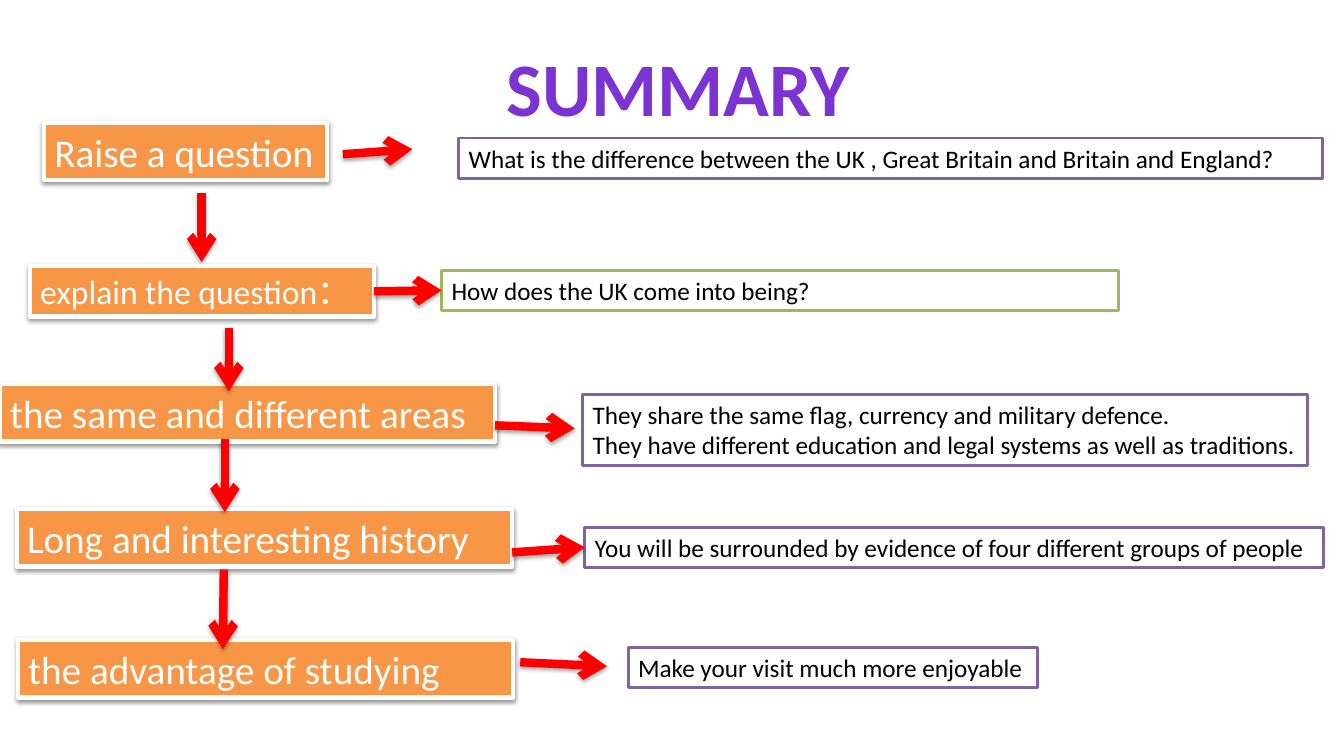
"""Build the SUMMARY slide: a chain of lesson steps, each pointing to its explanation."""
from lxml import etree
from pptx import Presentation
from pptx import util as u
from pptx.dml.color import RGBColor
from pptx.enum import shapes, text
from pptx.oxml import ns

COLORS = {
    "title": "7B34D2", "step": "F79646", "white": "FFFFFF", "black": "000000",
    "purple": "8064A2", "green": "9BBB59", "arrow": "FF0000",
}
COLORS = {name: RGBColor.from_string(value) for name, value in COLORS.items()}


def add_shadow(item, distance, opacity):
    """Give a shape or connector a soft shadow falling straight down."""
    effects = etree.SubElement(item._element.spPr, ns.qn("a:effectLst"))
    shadow = etree.SubElement(
        effects, ns.qn("a:outerShdw"), blurRad=str(u.Pt(3.1)), dist=str(u.Pt(distance)),
        dir="5400000", rotWithShape="0")
    color = etree.SubElement(shadow, ns.qn("a:srgbClr"), val="000000")
    etree.SubElement(color, ns.qn("a:alpha"), val=str(opacity * 1000))


def add_box(place, lines, size, color, wrap=True):
    """Add a text box with one paragraph per line."""
    box = slide.shapes.add_textbox(*map(u.Inches, place))
    frame = box.text_frame
    frame.word_wrap = wrap
    frame.auto_size = text.MSO_AUTO_SIZE.SHAPE_TO_FIT_TEXT
    frame.text = lines
    for para in frame.paragraphs:
        for span in para.runs:
            span.font.name = "Calibri"
            span.font.size = u.Pt(size)
            span.font.color.rgb = COLORS[color]
    return box


deck = Presentation()
deck.slide_width, deck.slide_height = u.Inches(13.33), u.Inches(7.5)
slide = deck.slides.add_slide(deck.slide_layouts[6])

title = add_box((4.9, 0.36, 3.82, 1.01), "SUMMARY ", 54, "title", wrap=False)
title_para = title.text_frame.paragraphs[0]
title_para.alignment = text.PP_ALIGN.CENTER
title_para.runs[0].font.bold = True

steps = [
    ("Raise a question", 28, (0.44, 1.22, 2.8, 0.57)),
    ("explain the question：", 24, (0.3, 2.64, 3.41, 0.5)),
    ("the same and different areas", 28, (0, 3.81, 4.91, 0.57)),
    ("Long and interesting history", 28, (0.17, 5.05, 4.91, 0.57)),
    ("the advantage of studying", 28, (0.18, 6.35, 4.91, 0.57)),
]
step_boxes = []
for label, size, place in steps:
    box = add_box(place, label, size, "white")
    box.fill.solid()
    box.fill.fore_color.rgb = COLORS["step"]
    box.line.color.rgb = COLORS["white"]
    box.line.width = u.Pt(3)
    add_shadow(box, 1.6, 38)
    step_boxes.append(box)
step_boxes[0].text_frame.word_wrap = False

answers = [
    ("What is the difference between the UK , Great Britain and Britain and England?",
     "purple", True, (4.55, 1.37, 8.57, 0.4)),
    ("How does the UK come into being?", "green", True, (4.38, 2.68, 6.71, 0.4)),
    ("They share the same flag, currency and military defence.\n"
     "They have different education and legal systems as well as traditions.",
     "purple", False, (5.78, 3.91, 7.19, 0.71)),
    ("You will be surrounded by evidence of four different groups of people",
     "purple", False, (5.8, 5.23, 7.33, 0.4)),
    ("Make your visit much more enjoyable", "purple", False, (6.23, 6.42, 4.06, 0.4)),
]
answer_boxes = []
for label, border, wrap, place in answers:
    box = add_box(place, label, 18, "black", wrap)
    box.fill.solid()
    box.fill.fore_color.rgb = COLORS["white"]
    box.line.color.rgb = COLORS[border]
    box.line.width = u.Pt(2)
    answer_boxes.append(box)

down_arrows = [
    (2, 1.91, 2, 2.6), (2.27, 3.25, 2.27, 3.88),
    (2.23, 4.36, 2.23, 5.08), (2.22, 5.65, 2.21, 6.44),
]
across_arrows = [
    (3.4, 1.53, 4.09, 1.48), (3.71, 2.89, 4.38, 2.88), (4.91, 4.22, 5.7, 4.25),
    (5.08, 5.48, 5.8, 5.44), (5.16, 6.57, 6.02, 6.61),
]
arrows = []
for ends in down_arrows + across_arrows:
    arrow = slide.shapes.add_connector(
        shapes.MSO_CONNECTOR.STRAIGHT, *map(u.Inches, ends))
    arrow.line.color.rgb = COLORS["arrow"]
    arrow.line.width = u.Pt(6)
    etree.SubElement(arrow.line._get_or_add_ln(), ns.qn("a:tailEnd"), type="arrow")
    add_shadow(arrow, 1.8, 35)
    arrows.append(arrow)

explain_arrow, history_arrow = arrows[5], arrows[7]
explain_arrow.begin_connect(step_boxes[1], 3)
explain_arrow.end_connect(answer_boxes[1], 1)
history_arrow.end_connect(answer_boxes[3], 1)

deck.save("out.pptx")
